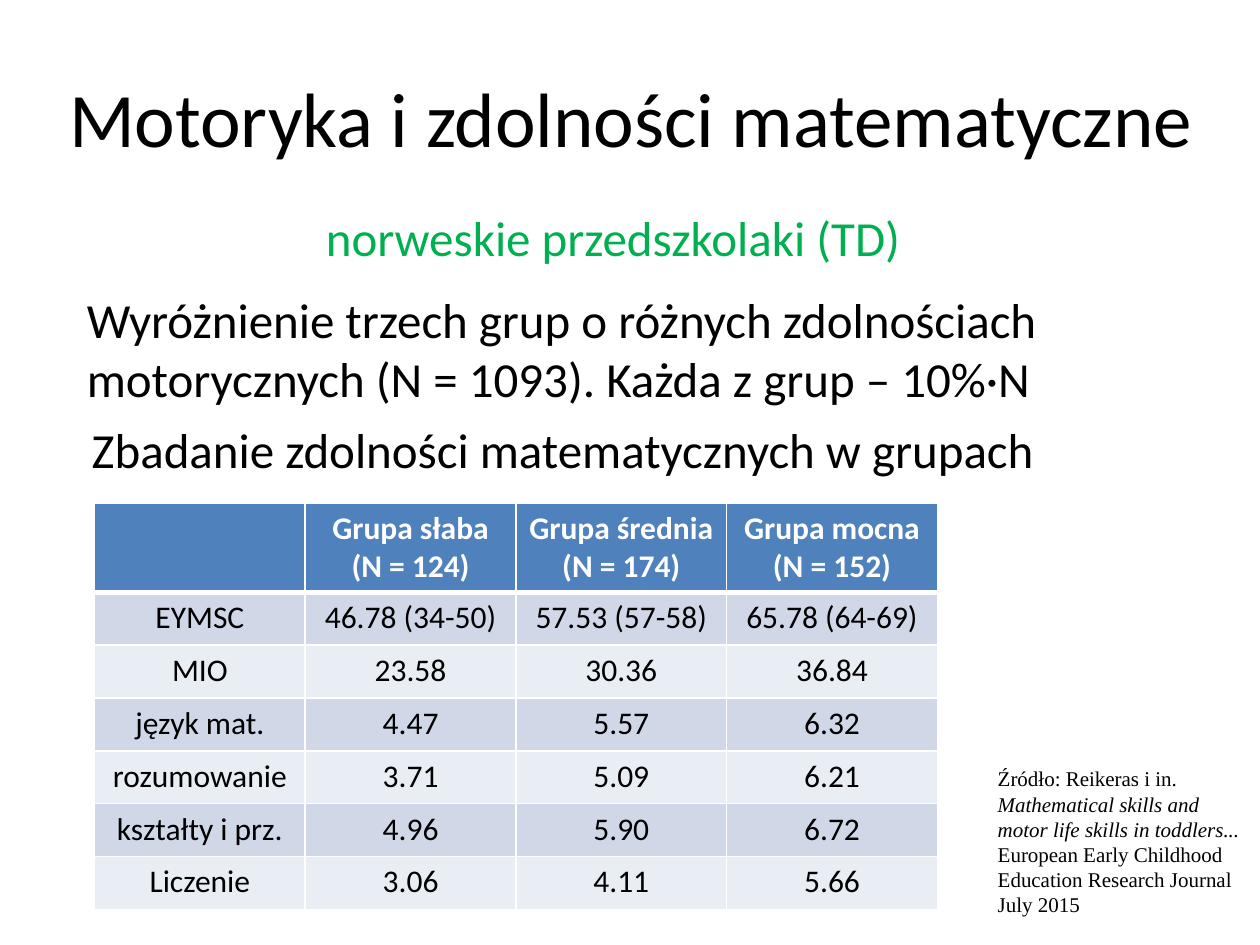
from copy import deepcopy

from lxml import etree
from pptx import Presentation
from pptx.dml.color import RGBColor
from pptx.enum import text
from pptx.oxml import ns
from pptx.util import Inches, Pt

BLACK = RGBColor(0x00, 0x00, 0x00)
WHITE = RGBColor(0xFF, 0xFF, 0xFF)
GREEN = RGBColor(0x00, 0xB0, 0x50)
HEADER_BLUE = RGBColor(0x4F, 0x81, 0xBD)
BANDS = (RGBColor(0xD0, 0xD8, 0xE8), RGBColor(0xE9, 0xED, 0xF4))

BODY_FONT = "Calibri"
SOURCE_FONT = "Times New Roman"

RESULTS = [
    ("", "Grupa słaba\v(N = 124)", "Grupa średnia\v(N = 174)", "Grupa mocna\v(N = 152)"),
    ("EYMSC", "46.78 (34-50)", "57.53 (57-58)", "65.78 (64-69)"),
    ("MIO", "23.58", "30.36", "36.84"),
    ("język mat.", "4.47", "5.57", "6.32"),
    ("rozumowanie", "3.71", "5.09", "6.21"),
    ("kształty i prz.", "4.96", "5.90", "6.72"),
    ("Liczenie", "3.06", "4.11", "5.66"),
]
CITATION = (
    "Źródło: Reikeras i in. \vMathematical skills and\vmotor life skills in toddlers...\v"
    "European Early Childhood\vEducation Research Journal\vJuly 2015"
)


def format_paragraph(paragraph, size, color, font=BODY_FONT, bold=False, centered=False):
    """Format every run, and give line breaks the same character properties."""
    paragraph.alignment = text.PP_ALIGN.CENTER if centered else text.PP_ALIGN.LEFT
    for run in paragraph.runs:
        run.font.name = font
        run.font.size = Pt(size)
        run.font.bold = bold
        run.font.color.rgb = color
    for line_break in paragraph._p.findall(ns.qn("a:br")):
        line_break.append(deepcopy(paragraph.runs[0].font._element))


def add_text(slide, box, wording, size, color=BLACK, font=BODY_FONT, centered=False):
    shape = slide.shapes.add_textbox(*map(Inches, box))
    frame = shape.text_frame
    frame.word_wrap = False
    frame.auto_size = text.MSO_AUTO_SIZE.SHAPE_TO_FIT_TEXT
    paragraph = frame.paragraphs[0]
    paragraph.text = wording
    format_paragraph(paragraph, size, color, font, centered=centered)
    return shape


def add_title(slide, box):
    frame = add_text(slide, box, "Motoryka i zdolności matematyczne", 44, centered=True).text_frame
    frame.auto_size = text.MSO_AUTO_SIZE.NONE
    frame.word_wrap = True
    frame.vertical_anchor = text.MSO_ANCHOR.MIDDLE


def add_border(cell, side, width):
    properties = cell._tc.get_or_add_tcPr()
    line = etree.SubElement(properties, ns.qn(f"a:ln{side}"), w=str(Pt(width)))
    fill = etree.SubElement(line, ns.qn("a:solidFill"))
    etree.SubElement(fill, ns.qn("a:srgbClr"), val=str(WHITE))


def add_results_table(slide, box):
    left, top, width, height = map(Inches, box)
    row_count, column_count = len(RESULTS), len(RESULTS[0])
    table = slide.shapes.add_table(row_count, column_count, left, top, width, height).table
    header_height = Inches(0.71)
    for row_index, values in enumerate(RESULTS):
        is_header = row_index == 0
        table.rows[row_index].height = (
            header_height if is_header else (height - header_height) // (row_count - 1)
        )
        for cell, value in zip(table.rows[row_index].cells, values):
            paragraph = cell.text_frame.paragraphs[0]
            paragraph.text = value
            format_paragraph(
                paragraph, 18, WHITE if is_header else BLACK, bold=is_header, centered=True
            )
            # Borders come before the fill in the cell properties
            for side in "LRTB":
                under_header = (is_header and side == "B") or (row_index == 1 and side == "T")
                add_border(cell, side, 3 if under_header else 1)
            cell.fill.solid()
            cell.fill.fore_color.rgb = HEADER_BLUE if is_header else BANDS[(row_index - 1) % 2]


def add_citation(slide, box):
    shape = add_text(slide, box, CITATION, 12, font=SOURCE_FONT)
    # The article title is in italics
    for run in shape.text_frame.paragraphs[0].runs[1:3]:
        run.font.italic = True


def main():
    presentation = Presentation()
    presentation.slide_width, presentation.slide_height = Inches(10), Inches(7.5)
    slide = presentation.slides.add_slide(presentation.slide_layouts[6])

    add_title(slide, (0.12, 0.3, 9.78, 1.25))
    add_text(slide, (2.46, 1.6, 4.81, 0.57), "norweskie przedszkolaki (TD)", 28, GREEN, centered=True)
    add_text(
        slide,
        (0.59, 2.25, 7.91, 1.04),
        "Wyróżnienie trzech grup o różnych zdolnościach \v"
        "motorycznych (N = 1093). Każda z grup – 10%·N",
        28,
    )
    add_results_table(slide, (0.75, 3.99, 6.69, 3.23))
    add_text(slide, (0.63, 3.28, 7.76, 0.57), "Zbadanie zdolności matematycznych w grupach", 28)
    add_citation(slide, (7.82, 6.03, 2.15, 1.31))

    presentation.save("out.pptx")


if __name__ == "__main__":
    main()
